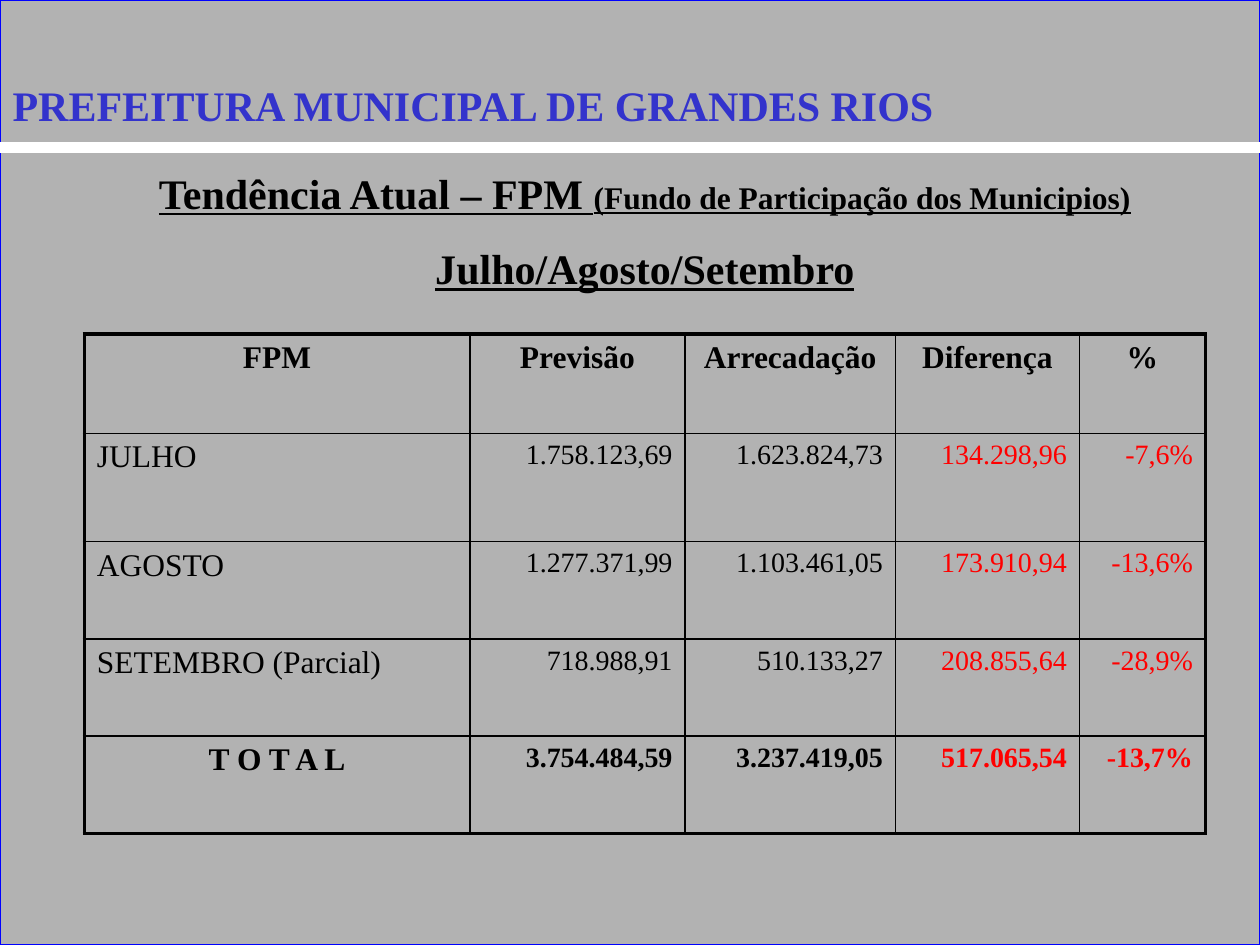
import pptx
import pptx.dml.color
import pptx.enum.shapes
import pptx.enum.text
import pptx.oxml
import pptx.oxml.ns
import pptx.util
from lxml import etree

Cm = pptx.util.Cm
Pt = pptx.util.Pt
RGBColor = pptx.dml.color.RGBColor
ALIGN = pptx.enum.text.PP_ALIGN

BLACK = RGBColor(0x00, 0x00, 0x00)
WHITE = RGBColor(0xFF, 0xFF, 0xFF)
GRAY = RGBColor(0xB2, 0xB2, 0xB2)
BLUE = RGBColor(0x00, 0x00, 0xFF)
TITLE_BLUE = RGBColor(0x33, 0x33, 0xCC)
RED = RGBColor(0xFF, 0x00, 0x00)
FONT = "Times New Roman"

SLIDE_WIDTH, SLIDE_HEIGHT = Cm(25.4), Cm(19.05)
COLUMN_WIDTHS = [7.77, 4.34, 4.24, 3.71, 2.54]
ROW_HEIGHTS = [2.01, 2.18, 1.96, 1.96, 1.96]
REVENUE = [
    ["FPM", "Previsão", "Arrecadação", "Diferença", "%"],
    ["JULHO", "1.758.123,69", "1.623.824,73", "134.298,96", "-7,6%"],
    ["AGOSTO", "1.277.371,99", "1.103.461,05", "173.910,94", "-13,6%"],
    ["SETEMBRO (Parcial)", "718.988,91", "510.133,27", "208.855,64", "-28,9%"],
    ["T O T A L", "3.754.484,59", "3.237.419,05", "517.065,54", "-13,7%"],
]


def write(paragraph, text, size=18, color=BLACK, bold=True, underline=None,
          align=ALIGN.LEFT, line_spacing=None):
    """Add a formatted run to a paragraph and return the run."""
    paragraph.alignment = align
    paragraph.line_spacing = line_spacing
    run = paragraph.add_run()
    run.text = text
    run.font.name = FONT
    run.font.size = Pt(size)
    run.font.bold = bold
    run.font.underline = underline
    run.font.color.rgb = color
    return run


def add_background(slide):
    panel = slide.shapes.add_shape(
        pptx.enum.shapes.MSO_SHAPE.RECTANGLE, 0, 0, SLIDE_WIDTH, SLIDE_HEIGHT)
    panel.shadow.inherit = False
    panel.fill.solid()
    panel.fill.fore_color.rgb = GRAY
    panel.line.color.rgb = BLUE
    panel.line.width = Pt(0.75)


def add_rule(slide, top):
    rule = slide.shapes.add_connector(
        pptx.enum.shapes.MSO_CONNECTOR.STRAIGHT, 0, top, SLIDE_WIDTH, top)
    rule.line.color.rgb = WHITE
    rule.line.width = Pt(6)
    etree.SubElement(rule._element.spPr, pptx.oxml.ns.qn("a:effectLst"))


def add_text_shadow(run):
    shadow = pptx.oxml.parse_xml(
        f'<a:effectLst {pptx.oxml.ns.nsdecls("a")}>'
        '<a:outerShdw dist="35921" dir="2700000"><a:srgbClr val="808080"/>'
        '</a:outerShdw></a:effectLst>')
    # Effects come right after the fill in the run properties
    run.font._element.find(pptx.oxml.ns.qn("a:solidFill")).addnext(shadow)


def format_title(slide, text):
    title = slide.shapes.title
    title.left, title.top, title.width, title.height = (
        Cm(0), Cm(1.47), Cm(20.9), Cm(1.27))
    frame = title.text_frame
    frame.word_wrap = True
    frame.auto_size = pptx.enum.text.MSO_AUTO_SIZE.NONE
    frame.vertical_anchor = pptx.enum.text.MSO_ANCHOR.TOP
    add_text_shadow(write(frame.paragraphs[0], text, size=24, color=TITLE_BLUE))
    # Bring the title in front of the background panel
    slide.shapes._spTree.append(title._element)


def add_subtitle(slide):
    subtitle = slide.shapes.add_textbox(Cm(0.3), Cm(2.74), SLIDE_WIDTH, Cm(3.6))
    frame = subtitle.text_frame
    frame.word_wrap = True
    style = dict(underline=True, align=ALIGN.CENTER, line_spacing=1.5)
    heading = frame.paragraphs[0]
    write(heading, "Tendência Atual – FPM ", size=24, **style)
    write(heading, "(Fundo de Participação dos Municipios)", **style)
    write(frame.add_paragraph(), "Julho/Agosto/Setembro", size=24, **style)


def set_borders(cell, **widths):
    properties = cell._tc.get_or_add_tcPr()
    for side, width in widths.items():
        properties.append(pptx.oxml.parse_xml(
            f'<a:ln{side} {pptx.oxml.ns.nsdecls("a")} w="{Pt(width)}">'
            f'<a:solidFill><a:srgbClr val="{BLACK}"/></a:solidFill></a:ln{side}>'))


def add_revenue_table(slide):
    last_row, last_column = len(ROW_HEIGHTS) - 1, len(COLUMN_WIDTHS) - 1
    table = slide.shapes.add_table(
        len(ROW_HEIGHTS), len(COLUMN_WIDTHS), Cm(1.7), Cm(6.73),
        Cm(sum(COLUMN_WIDTHS)), Cm(sum(ROW_HEIGHTS))).table
    table.first_row = table.horz_banding = False
    for column, width in zip(table.columns, COLUMN_WIDTHS):
        column.width = Cm(width)
    for row, height in zip(table.rows, ROW_HEIGHTS):
        row.height = Cm(height)

    for r, values in enumerate(REVENUE):
        for c, value in enumerate(values):
            cell = table.cell(r, c)
            is_amount = r > 0 and c > 0
            if is_amount:
                align = ALIGN.RIGHT
            elif r in (0, last_row):
                align = ALIGN.CENTER
            else:
                align = ALIGN.LEFT
            write(cell.text_frame.paragraphs[0], value, align=align,
                  size=16 if is_amount else 18,
                  color=RED if is_amount and c >= 3 else BLACK,
                  bold=r in (0, last_row))
            # Thick outer frame, thin inner grid
            set_borders(cell,
                        L=2.25 if c == 0 else 1,
                        R=2.25 if c == last_column else 1,
                        T=2.25 if r == 0 else 1,
                        B=2.25 if r == last_row else 1)
            cell.fill.background()


def main():
    deck = pptx.Presentation()
    deck.slide_width, deck.slide_height = SLIDE_WIDTH, SLIDE_HEIGHT
    slide = deck.slides.add_slide(deck.slide_layouts[5])
    add_background(slide)
    add_rule(slide, Cm(2.97))
    add_subtitle(slide)
    add_revenue_table(slide)
    format_title(slide, "PREFEITURA MUNICIPAL DE GRANDES RIOS")
    deck.save("out.pptx")


if __name__ == "__main__":
    main()
